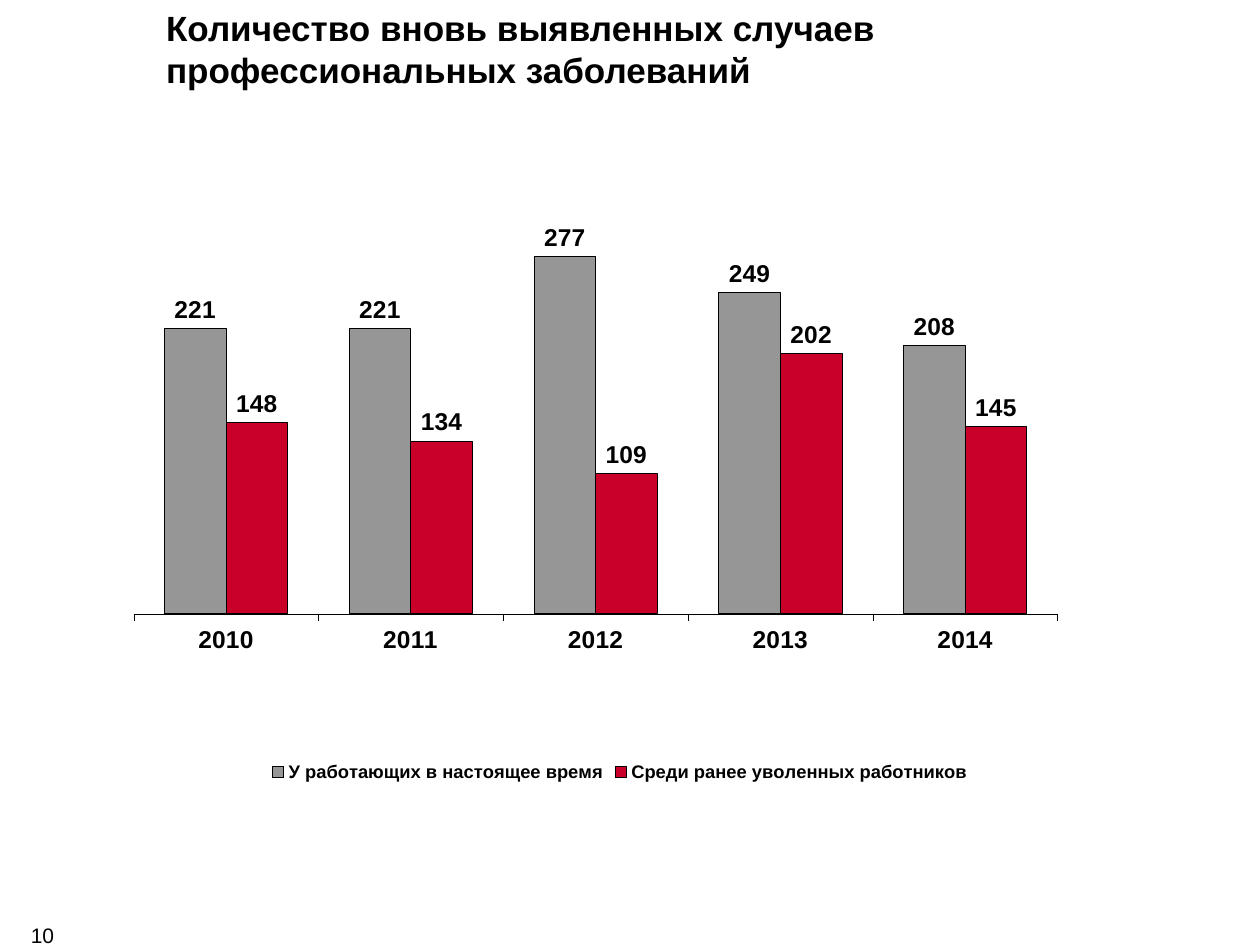
from lxml import etree
from pptx import Presentation
from pptx.chart.data import CategoryChartData
from pptx.dml.color import RGBColor
from pptx.enum.chart import XL_CHART_TYPE, XL_LABEL_POSITION, XL_LEGEND_POSITION, XL_TICK_LABEL_POSITION, XL_TICK_MARK
from pptx.enum.text import MSO_ANCHOR, PP_ALIGN
from pptx.oxml.ns import qn
from pptx.util import Inches, Pt


def color(hex_string):
    return RGBColor.from_string(hex_string)


def set_font(font, size, bold=True):
    font.name = "Arial"
    font.size = Pt(size)
    font.bold = bold
    font.color.rgb = color("000000")


presentation = Presentation()
presentation.slide_width = Inches(10)
presentation.slide_height = Inches(7.5)
slide = presentation.slides.add_slide(presentation.slide_layouts[6])

# Page number
page_number = slide.shapes.add_textbox(Inches(0), Inches(7.18), Inches(0.43), Inches(0.39))
text_frame = page_number.text_frame
text_frame.margin_left = text_frame.margin_right = 0
text_frame.vertical_anchor = MSO_ANCHOR.BOTTOM
text_frame.word_wrap = True
text_frame.text = "10"
text_frame.paragraphs[0].alignment = PP_ALIGN.RIGHT
set_font(text_frame.paragraphs[0].runs[0].font, 12, bold=False)

# Chart data
chart_data = CategoryChartData()
chart_data.categories = ["2010", "2011", "2012", "2013", "2014"]
chart_data.add_series("У работающих в настоящее время", [221, 221, 277, 249, 208])
chart_data.add_series("Среди ранее уволенных работников", [148, 134, 109, 202, 145])
chart = slide.shapes.add_chart(
    XL_CHART_TYPE.COLUMN_CLUSTERED,
    Inches(1.06), Inches(1.78), Inches(7.72), Inches(4.47), chart_data,
).chart
chart.has_title = False
set_font(chart.font, 9.7)

# Columns and value labels
plot = chart.plots[0]
plot.gap_width = 100
plot.overlap = 0
plot.vary_by_categories = False
for series, fill_color in zip(plot.series, ["969696", "C90128"]):
    series.format.fill.solid()
    series.format.fill.fore_color.rgb = color(fill_color)
    series.format.line.color.rgb = color("000000")
    series.format.line.width = Pt(0.52)
    labels = series.data_labels
    labels.show_value = True
    labels.position = XL_LABEL_POSITION.OUTSIDE_END
    set_font(labels.font, 14)

# Axes
category_axis = chart.category_axis
category_axis.major_tick_mark = XL_TICK_MARK.OUTSIDE
category_axis.tick_label_position = XL_TICK_LABEL_POSITION.LOW
category_axis.format.line.color.rgb = color("000000")
category_axis.format.line.width = Pt(0.13)
set_font(category_axis.tick_labels.font, 14)
value_axis = chart.value_axis
value_axis.minimum_scale = 0
value_axis.maximum_scale = 300
value_axis.has_major_gridlines = False
value_axis.visible = False

# Legend
chart.has_legend = True
chart.legend.position = XL_LEGEND_POSITION.BOTTOM
chart.legend.include_in_layout = False
set_font(chart.legend.font, 10.5)

# Fixed inner plot area
plot_area = plot._element.getparent()
layout = plot_area.find(qn("c:layout"))
if layout is None:
    layout = etree.Element(qn("c:layout"))
    plot_area.insert(0, layout)
manual_layout = etree.SubElement(layout, qn("c:manualLayout"))
for tag, value in [("layoutTarget", "inner"), ("xMode", "edge"), ("yMode", "edge"),
                   ("x", "0"), ("y", "0"), ("w", "0.95"), ("h", "0.69")]:
    etree.SubElement(manual_layout, qn(f"c:{tag}")).set("val", value)

# Title
title = slide.shapes.add_textbox(Inches(1.22), Inches(0), Inches(7.4), Inches(0.77))
title.text_frame.word_wrap = True
title.text_frame.text = "Количество вновь выявленных случаев\vпрофессиональных заболеваний"
for run in title.text_frame.paragraphs[0].runs:
    set_font(run.font, 20)

presentation.save("out.pptx")
